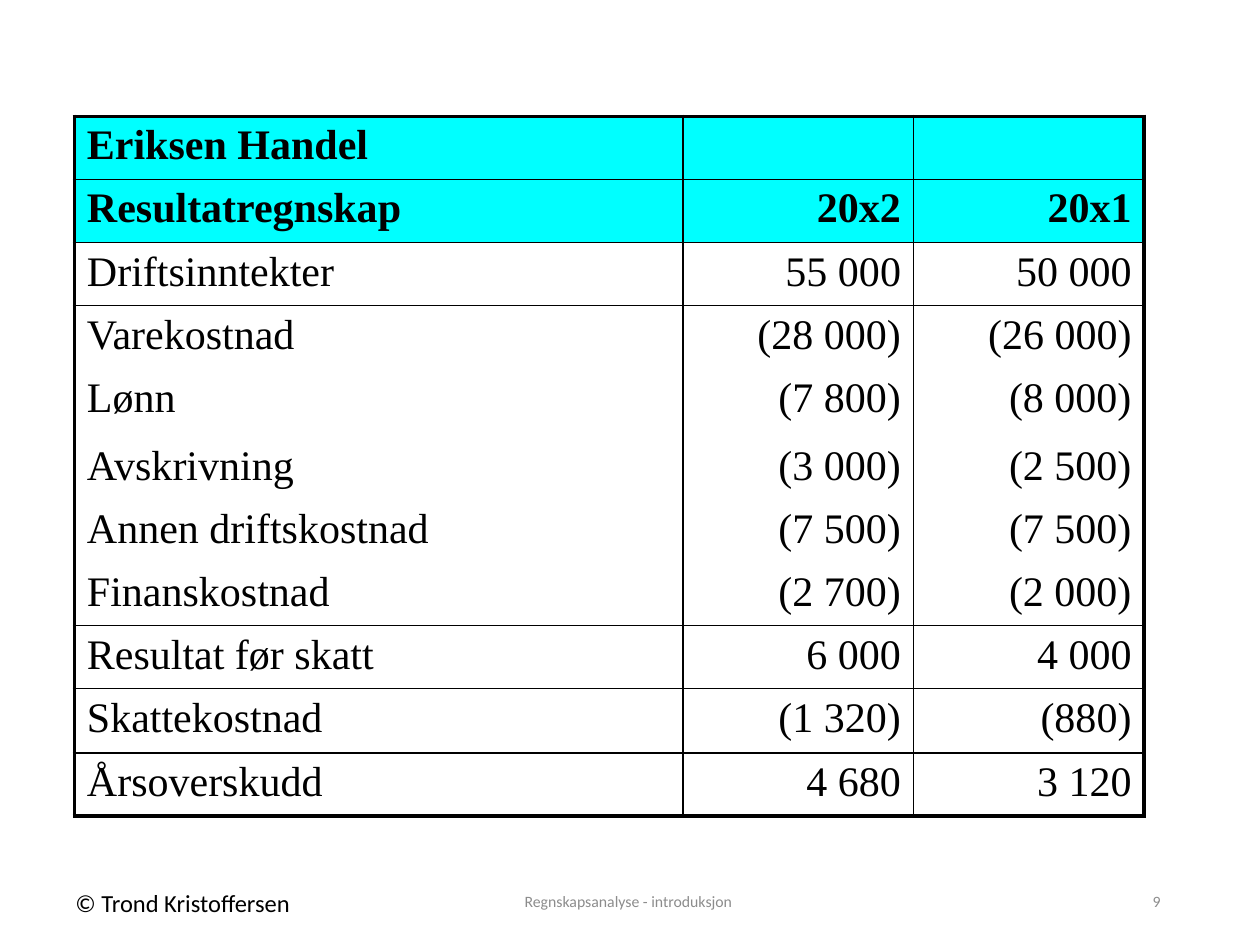
import dataclasses

import pptx
import pptx.dml.color
import pptx.enum.text
import pptx.oxml
import pptx.oxml.ns
import pptx.util

ALIGN = pptx.enum.text.PP_ALIGN
ANCHOR = pptx.enum.text.MSO_ANCHOR
WIDE, HIGH = 10, 7.5
BLACK, GREY, CYAN = "000000", "8C8C8C", "00FFFF"
THICK, THIN = 2.25, 1

HEADS = 2
COSTS = range(3, 8)  # rows with no rule between them
COLS = (4.83, 1.83, 1.83)
ROW = 0.5
TALL = {4: 0.54, 9: 0.51}
LINES = (
    ("Eriksen Handel", "", ""),
    ("Resultatregnskap", "20x2", "20x1"),
    ("Driftsinntekter", "55 000", "50 000"),
    ("Varekostnad", "(28 000)", "(26 000)"),
    ("Lønn", "(7 800)", "(8 000)"),
    ("Avskrivning", "(3 000)", "(2 500)"),
    ("Annen driftskostnad", "(7 500)", "(7 500)"),
    ("Finanskostnad", "(2 700)", "(2 000)"),
    ("Resultat før skatt", "6 000", "4 000"),
    ("Skattekostnad", "(1 320)", "(880)"),
    ("Årsoverskudd", "4 680", "3 120"),
)


@dataclasses.dataclass
class Label:
    """A footer text; its box is given as shares of the slide's size."""
    text: str
    left: float
    top: float
    width: float
    height: float
    size: float
    color: str
    align: ALIGN
    anchor: ANCHOR
    wrap: bool = True


LABELS = (
    Label("© Trond Kristoffersen", 0.05, 0.933, 0.195, 0.044, 14, BLACK,
          ALIGN.LEFT, ANCHOR.TOP, False),
    Label("Regnskapsanalyse - introduksjon ", 0.331, 0.927, 0.338, 0.053, 9, GREY,
          ALIGN.CENTER, ANCHOR.MIDDLE),
    Label("9", 0.706, 0.927, 0.225, 0.053, 9, GREY, ALIGN.RIGHT, ANCHOR.MIDDLE),
)


def rgb(color: str) -> pptx.dml.color.RGBColor:
    return pptx.dml.color.RGBColor.from_string(color)


def style(para, font: str, size: float, color: str, align: ALIGN, bold=False) -> None:
    para.alignment = align
    para.font.name = font
    para.font.size = pptx.util.Pt(size)
    para.font.color.rgb = rgb(color)
    para.font.bold = bold


def add_label(slide, label: Label) -> None:
    box = slide.shapes.add_textbox(
        pptx.util.Inches(label.left * WIDE), pptx.util.Inches(label.top * HIGH),
        pptx.util.Inches(label.width * WIDE), pptx.util.Inches(label.height * HIGH))
    frame = box.text_frame
    frame.word_wrap = label.wrap
    frame.vertical_anchor = label.anchor
    frame.text = label.text
    style(frame.paragraphs[0], "Calibri", label.size, label.color, label.align)


def add_edge(cell, side: str, width: float) -> None:
    """Draw one cell border; a width of 0 hides it."""
    paint = (f'<a:solidFill><a:srgbClr val="{BLACK}"/></a:solidFill>'
             if width else "<a:noFill/>")
    cell._tc.get_or_add_tcPr().append(pptx.oxml.parse_xml(
        f'<a:ln{side} {pptx.oxml.ns.nsdecls("a")} w="{pptx.util.Pt(width)}">'
        f"{paint}</a:ln{side}>"))


def add_edges(cell, row: int, col: int) -> None:
    last = len(LINES) - 1
    inner = {"T": row in COSTS[1:], "B": row in COSTS[:-1]}
    outer = {"L": col == 0, "R": col == len(COLS) - 1, "T": row == 0, "B": row == last}
    for side, rim in outer.items():
        add_edge(cell, side, THICK if rim else 0 if inner.get(side) else THIN)


def fill_cell(cell, row: int, col: int) -> None:
    head = row < HEADS
    cell.text = LINES[row][col]
    style(cell.text_frame.paragraphs[0], "Times New Roman", 24, BLACK,
          ALIGN.RIGHT if col else ALIGN.LEFT, head)
    add_edges(cell, row, col)
    if head:
        cell.fill.solid()
        cell.fill.fore_color.rgb = rgb(CYAN)
    else:
        cell.fill.background()


def add_report(slide) -> None:
    highs = [TALL.get(row, ROW) for row in range(len(LINES))]
    table = slide.shapes.add_table(
        len(LINES), len(COLS), pptx.util.Inches(0.059 * WIDE),
        pptx.util.Inches(0.123 * HIGH), pptx.util.Inches(sum(COLS)),
        pptx.util.Inches(sum(highs))).table
    table.first_row = table.horz_banding = False
    for col, width in enumerate(COLS):
        table.columns[col].width = pptx.util.Inches(width)
    for row, high in enumerate(highs):
        table.rows[row].height = pptx.util.Inches(high)
        for col in range(len(COLS)):
            fill_cell(table.cell(row, col), row, col)


def main() -> None:
    deck = pptx.Presentation()
    deck.slide_width = pptx.util.Inches(WIDE)
    deck.slide_height = pptx.util.Inches(HIGH)
    slide = deck.slides.add_slide(deck.slide_layouts[6])
    for label in LABELS:
        add_label(slide, label)
    add_report(slide)
    deck.save("out.pptx")


if __name__ == "__main__":
    main()
